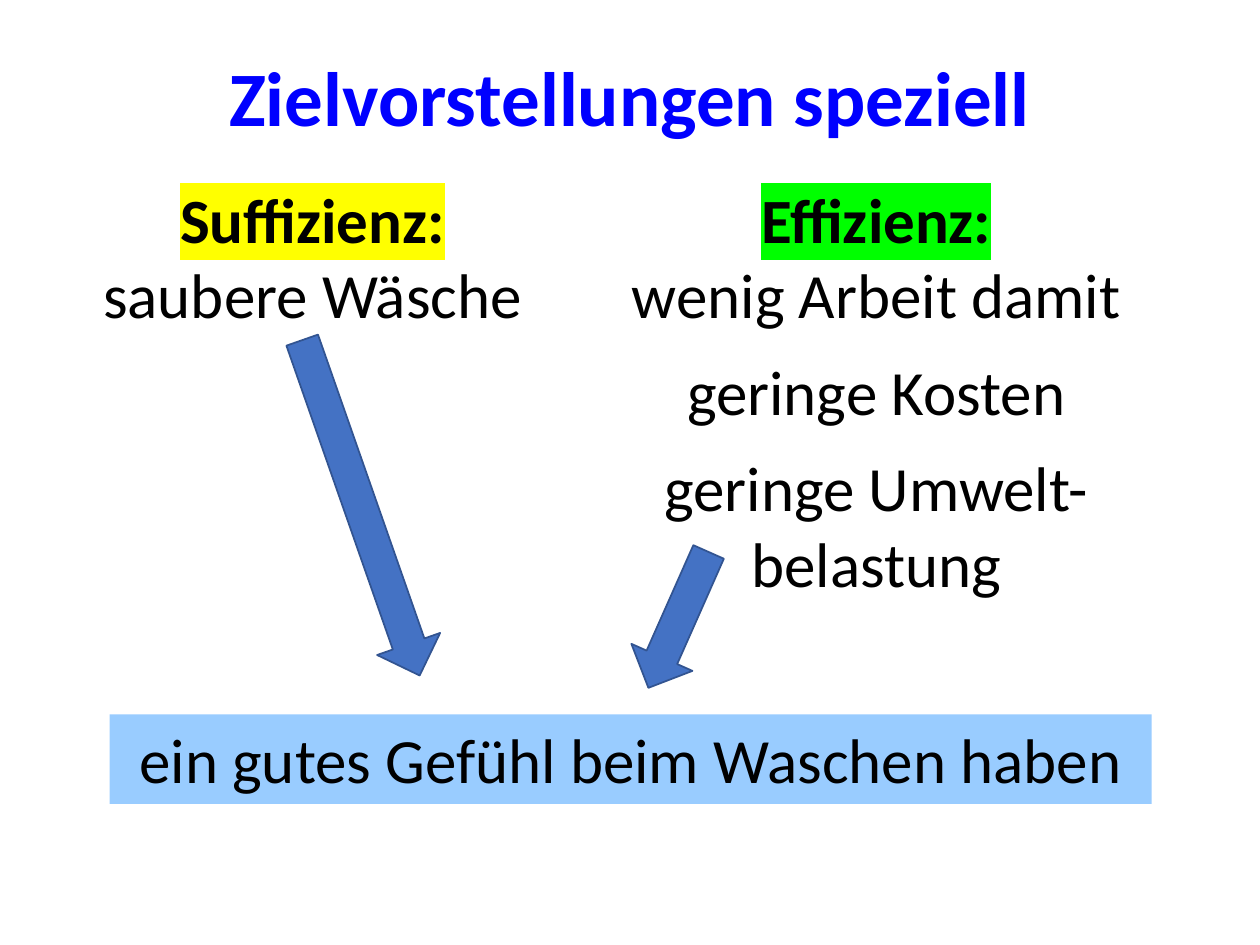
import lxml.etree
import pptx
import pptx.dml.color
import pptx.enum.shapes
import pptx.enum.text
import pptx.oxml.ns
import pptx.util

Inches = pptx.util.Inches
SHAPE = pptx.enum.shapes.MSO_SHAPE
TEXT = pptx.enum.text
HUES = {
    "title": "0000FF", "text": "000000", "goal": "99CCFF",
    "arrow": "4472C4", "edge": "325491",
    "yellow": "FFFF00", "green": "00FF00",
}


def color(name):
    return pptx.dml.color.RGBColor.from_string(HUES[name])


def adjust(item, values):
    for key, value in values.items():
        setattr(item, key, value)


class Deck:
    font = {"name": "Calibri", "size": pptx.util.Pt(36), "bold": False}
    frame = {"word_wrap": True, "auto_size": TEXT.MSO_AUTO_SIZE.SHAPE_TO_FIT_TEXT,
             "vertical_anchor": TEXT.MSO_ANCHOR.TOP}

    def __init__(self):
        self.show = pptx.Presentation()
        adjust(self.show, {"slide_width": Inches(10), "slide_height": Inches(7.5)})
        self.slide = self.show.slides.add_slide(self.show.slide_layouts[5])

    def line(self, para, text, hue="text", mark=None, after=0, **font):
        para.alignment = TEXT.PP_ALIGN.CENTER
        if after:
            para.space_after = pptx.util.Pt(after)
        run = para.add_run()
        run.text = text
        adjust(run.font, {**self.font, **font})
        run.font.color.rgb = color(hue)
        if mark:
            qn = pptx.oxml.ns.qn
            light = lxml.etree.Element(qn("a:highlight"))
            lxml.etree.SubElement(light, qn("a:srgbClr"), val=HUES[mark])
            run._r.get_or_add_rPr().find(qn("a:solidFill")).addnext(light)

    def title(self, text, left, top, width, height):
        head = self.slide.shapes.title
        adjust(head, {"left": Inches(left), "top": Inches(top),
                      "width": Inches(width), "height": Inches(height)})
        adjust(head.text_frame, {"vertical_anchor": TEXT.MSO_ANCHOR.MIDDLE,
                                 "auto_size": TEXT.MSO_AUTO_SIZE.NONE})
        para = head.text_frame.paragraphs[0]
        para.line_spacing = 0.9
        self.line(para, text, "title", size=pptx.util.Pt(44), bold=True)

    def column(self, head, mark, rows, left, width, height, after=0):
        box = self.slide.shapes.add_textbox(
            Inches(left), Inches(1.38), Inches(width), Inches(height))
        adjust(box.text_frame, self.frame)
        self.line(box.text_frame.paragraphs[0], head, mark=mark, bold=True)
        for row in rows:
            self.line(box.text_frame.add_paragraph(), row, after=after)

    def shape(self, kind, fill, left, top, width, height):
        item = self.slide.shapes.add_shape(
            kind, Inches(left), Inches(top), Inches(width), Inches(height))
        item.shadow.inherit = False
        item.fill.solid()
        item.fill.fore_color.rgb = color(fill)
        return item

    def banner(self, text, *place):
        bar = self.shape(SHAPE.RECTANGLE, "goal", *place)
        bar.line.fill.background()
        adjust(bar.text_frame, self.frame)
        self.line(bar.text_frame.paragraphs[0], text)

    def arrow(self, left, top, height, turn):
        item = self.shape(SHAPE.DOWN_ARROW, "arrow", left, top, 0.53, height)
        item.rotation = turn
        item.line.color.rgb = color("edge")
        item.line.width = pptx.util.Pt(1)


def main():
    deck = Deck()
    deck.title("Zielvorstellungen speziell", 0.69, 0.4, 8.62, 0.82)
    deck.column("Suffizienz:", "yellow", ["saubere Wäsche"], 0.69, 3.58, 1.31)
    deck.column("Effizienz:", "green",
                ["wenig Arbeit damit", "geringe Kosten", "geringe Umwelt-belastung"],
                4.74, 4.43, 3.47, after=12)
    deck.banner("ein gutes Gefühl beim Waschen haben", 0.87, 5.67, 8.27, 0.71)
    deck.arrow(2.6, 2.62, 2.82, 340.7)
    deck.arrow(5.12, 4.33, 1.18, 23.9)
    deck.show.save("out.pptx")


if __name__ == "__main__":
    main()
